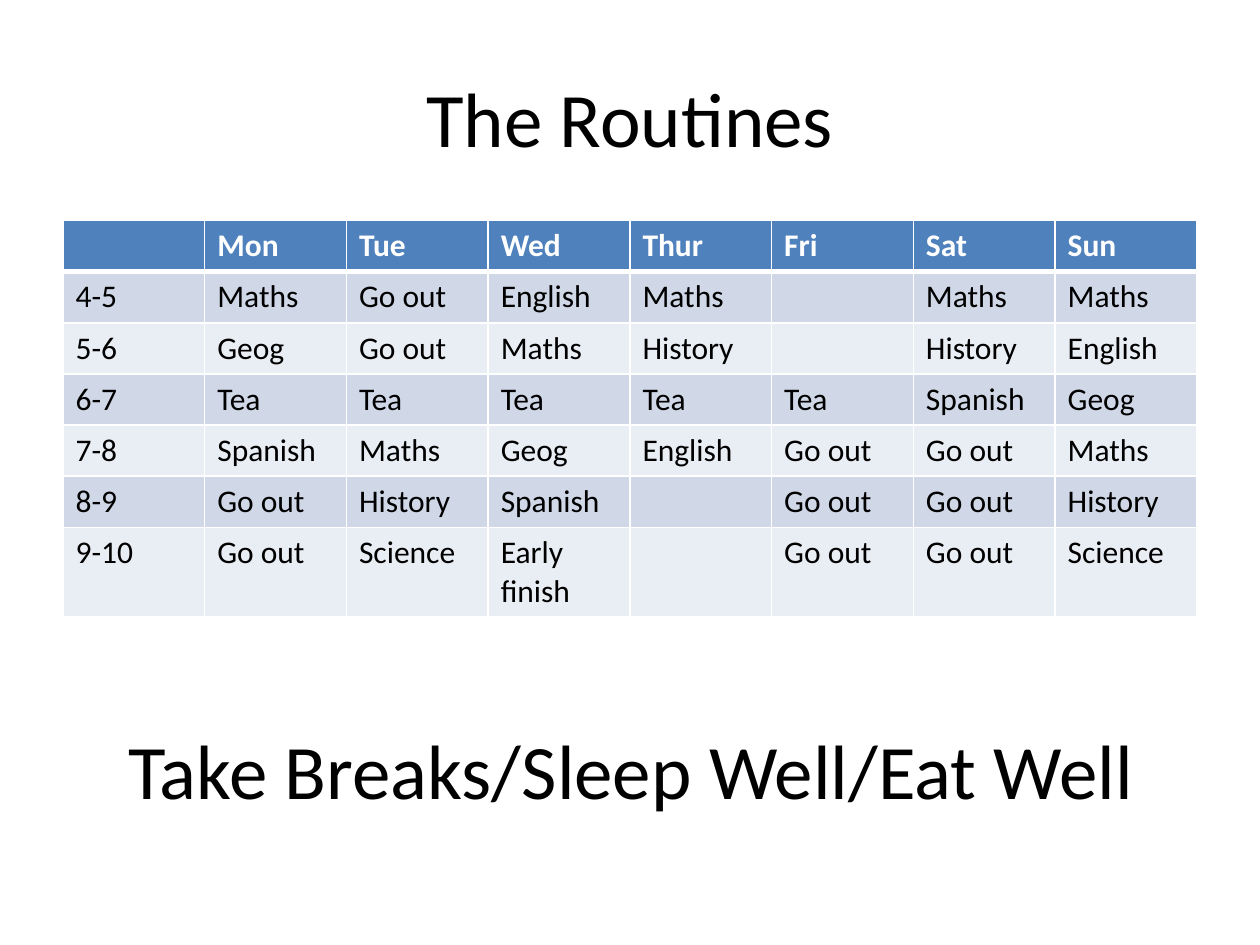
import dataclasses

import lxml.etree
import pptx
import pptx.dml.color
import pptx.enum.text
import pptx.oxml.ns
import pptx.util

PX = 9525  # EMU, 96 px to the inch
FONT = "Calibri"

BLACK = pptx.dml.color.RGBColor(0x00, 0x00, 0x00)
WHITE = pptx.dml.color.RGBColor(0xFF, 0xFF, 0xFF)
HEADER_BLUE = pptx.dml.color.RGBColor(0x4F, 0x81, 0xBD)
BAND_DARK = pptx.dml.color.RGBColor(0xD0, 0xD8, 0xE8)
BAND_LIGHT = pptx.dml.color.RGBColor(0xE9, 0xED, 0xF4)

TIMETABLE = [
    ["", "Mon", "Tue", "Wed", "Thur", "Fri", "Sat", "Sun"],
    ["4-5", "Maths", "Go out", "English", "Maths", "", "Maths", "Maths"],
    ["5-6", "Geog", "Go out", "Maths", "History", "", "History", "English"],
    ["6-7", "Tea", "Tea", "Tea", "Tea", "Tea", "Spanish", "Geog"],
    ["7-8", "Spanish", "Maths", "Geog", "English", "Go out", "Go out", "Maths"],
    ["8-9", "Go out", "History", "Spanish", "", "Go out", "Go out", "History"],
    ["9-10", "Go out", "Science", "Early finish", "", "Go out", "Go out", "Science"],
]


@dataclasses.dataclass(frozen=True)
class Box:
    left: int
    top: int
    width: int
    height: int

    def emu(self) -> tuple[int, int, int, int]:
        return tuple(v * PX for v in dataclasses.astuple(self))


@dataclasses.dataclass(frozen=True)
class RowStyle:
    fill: pptx.dml.color.RGBColor
    color: pptx.dml.color.RGBColor = BLACK
    bold: bool = False
    top: int = 1
    bottom: int = 1


def row_style(index: int) -> RowStyle:
    """Blue header over alternating bands, with a thick rule between them."""
    if index == 0:
        return RowStyle(HEADER_BLUE, WHITE, bold=True, bottom=3)
    return RowStyle(BAND_DARK if index % 2 else BAND_LIGHT, top=3 if index == 1 else 1)


def add_run(p, text: str, size: int, color: pptx.dml.color.RGBColor, bold: bool = False) -> None:
    r = p.add_run()
    r.text = text
    r.font.name = FONT
    r.font.size = pptx.util.Pt(size)
    r.font.bold = bold
    r.font.color.rgb = color


def write_heading(sp, box: Box, text: str) -> None:
    sp.left, sp.top, sp.width, sp.height = box.emu()
    tf = sp.text_frame
    tf.word_wrap = True
    tf.vertical_anchor = pptx.enum.text.MSO_ANCHOR.MIDDLE
    p = tf.paragraphs[0]
    p.alignment = pptx.enum.text.PP_ALIGN.CENTER
    add_run(p, text, 44, BLACK)


def add_border(cell, side: str, points: int) -> None:
    qn = pptx.oxml.ns.qn
    tc_pr = cell._tc.get_or_add_tcPr()
    ln = lxml.etree.SubElement(tc_pr, qn(f"a:ln{side}"), w=str(pptx.util.Pt(points)))
    fill = lxml.etree.SubElement(ln, qn("a:solidFill"))
    lxml.etree.SubElement(fill, qn("a:srgbClr"), val=str(WHITE))


def format_cell(cell, text: str, style: RowStyle) -> None:
    # The schema wants the borders ahead of the fill.
    for side, points in (("L", 1), ("R", 1), ("T", style.top), ("B", style.bottom)):
        add_border(cell, side, points)
    cell.fill.solid()
    cell.fill.fore_color.rgb = style.fill
    if text:
        add_run(cell.text_frame.paragraphs[0], text, 18, style.color, style.bold)


def add_timetable(s, box: Box, row_height: int) -> None:
    frame = s.shapes.add_table(len(TIMETABLE), len(TIMETABLE[0]), *box.emu())
    table = frame.table
    for i, texts in enumerate(TIMETABLE):
        table.rows[i].height = row_height * PX
        for j, text in enumerate(texts):
            format_cell(table.cell(i, j), text, row_style(i))
    frame.height = box.height * PX


def main() -> None:
    prs = pptx.Presentation()
    prs.slide_width, prs.slide_height = 960 * PX, 720 * PX
    s = prs.slides.add_slide(prs.slide_layouts[5])
    write_heading(s.shapes.title, Box(48, 29, 864, 120), "The Routines")
    add_timetable(s, Box(48, 168, 864, 300), row_height=39)
    advice = Box(49, 526, 864, 120)
    write_heading(s.shapes.add_textbox(*advice.emu()), advice, "Take Breaks/Sleep Well/Eat Well")
    prs.save("out.pptx")


if __name__ == "__main__":
    main()
